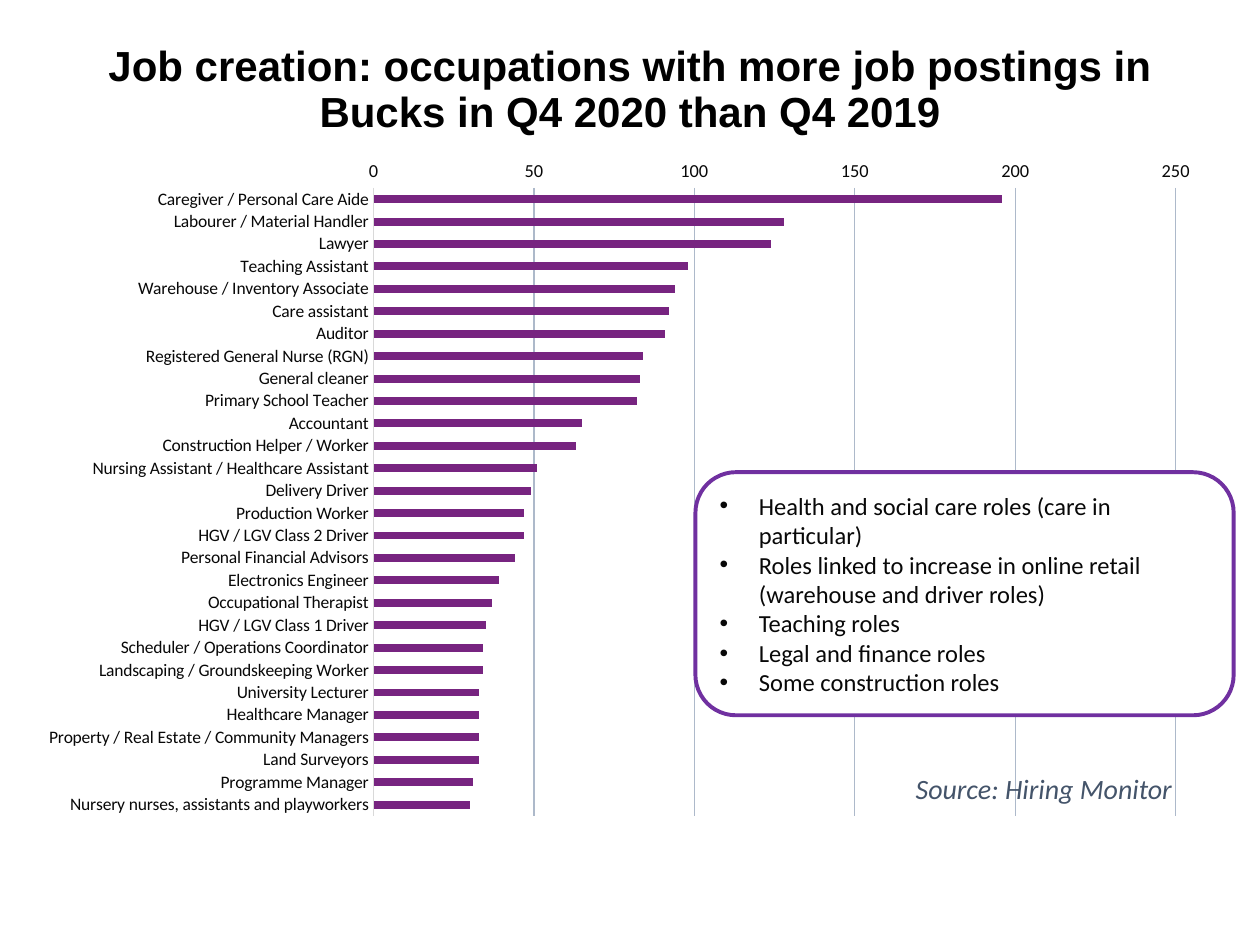
from pptx import Presentation
from pptx.chart.data import CategoryChartData
from pptx.dml.color import RGBColor
from pptx.enum.chart import XL_CHART_TYPE as ChartType, XL_TICK_MARK as TickMark
from pptx.enum.shapes import MSO_SHAPE as Shape
from pptx.enum.text import MSO_ANCHOR as Anchor, PP_ALIGN as Align
from pptx.oxml import parse_xml
from pptx.oxml.ns import nsdecls, qn
from pptx.util import Cm, Pt
from lxml.etree import SubElement

BLACK = RGBColor(0x00, 0x00, 0x00)
INK = RGBColor(0x08, 0x08, 0x08)
WHITE = RGBColor(0xFF, 0xFF, 0xFF)
PLUM = RGBColor(0x77, 0x24, 0x80)
PURPLE = RGBColor(0x70, 0x30, 0xA0)
SLATE = RGBColor(0x44, 0x54, 0x6A)
GRID = RGBColor(0xAD, 0xB9, 0xCA)
AXIS = RGBColor(0xD9, 0xD9, 0xD9)

POSTINGS = {
    "Caregiver / Personal Care Aide": 196,
    "Labourer / Material Handler": 128,
    "Lawyer": 124,
    "Teaching Assistant": 98,
    "Warehouse / Inventory Associate": 94,
    "Care assistant": 92,
    "Auditor": 91,
    "Registered General Nurse (RGN)": 84,
    "General cleaner": 83,
    "Primary School Teacher": 82,
    "Accountant": 65,
    "Construction Helper / Worker": 63,
    "Nursing Assistant / Healthcare Assistant": 51,
    "Delivery Driver": 49,
    "Production Worker": 47,
    "HGV / LGV Class 2 Driver": 47,
    "Personal Financial Advisors": 44,
    "Electronics Engineer": 39,
    "Occupational Therapist": 37,
    "HGV / LGV Class 1 Driver": 35,
    "Scheduler / Operations Coordinator": 34,
    "Landscaping / Groundskeeping Worker": 34,
    "University Lecturer": 33,
    "Healthcare Manager": 33,
    "Property / Real Estate / Community Managers": 33,
    "Land Surveyors": 33,
    "Programme Manager": 31,
    "Nursery nurses, assistants and playworkers": 30,
}
FINDINGS = [
    "Health and social care roles (care in particular)",
    "Roles linked to increase in online retail (warehouse and driver roles)",
    "Teaching roles",
    "Legal and finance roles",
    "Some construction roles",
]


def style_font(font, size, color, name="Calibri", bold=False, italic=False):
    """Set the look of a font."""
    font.name, font.size, font.bold, font.italic = name, Pt(size), bold, italic
    font.color.rgb = color


def add_run(p, text, *look, **flags):
    """Append a formatted run to a paragraph."""
    r = p.add_run()
    r.text = text
    style_font(r.font, *look, **flags)


def add_title(s, text):
    """Place and fill the title placeholder."""
    sp = s.shapes.title
    sp.left, sp.top, sp.width, sp.height = Cm(1.75), Cm(0.53), Cm(21.9), Cm(2.6)
    tf = sp.text_frame
    tf.word_wrap = True
    tf.vertical_anchor = Anchor.MIDDLE
    p = tf.paragraphs[0]
    p.alignment, p.line_spacing = Align.CENTER, 0.9
    add_run(p, text, 24, BLACK, "Arial", bold=True)


def set_plot_area(chart, frame, x, y, w, h):
    """Fix the inner plot area inside the chart frame."""
    shares = {"x": x / frame.width, "y": y / frame.height,
              "w": w / frame.width, "h": h / frame.height}
    sizes = "".join(f'<c:{k} val="{v:.4f}"/>' for k, v in shares.items())
    area = chart._chartSpace.find(".//" + qn("c:plotArea"))
    for old in area.findall(qn("c:layout")):
        area.remove(old)
    area.insert(0, parse_xml(
        f'<c:layout {nsdecls("c")}><c:manualLayout><c:layoutTarget val="inner"/>'
        f'<c:xMode val="edge"/><c:yMode val="edge"/>{sizes}</c:manualLayout></c:layout>'))


def style_axis(axis, size):
    """Remove tick marks and set the label font of an axis."""
    axis.major_tick_mark = axis.minor_tick_mark = TickMark.NONE
    style_font(axis.tick_labels.font, size, INK)


def add_postings_chart(s):
    """Add the bar chart of job postings by occupation."""
    data = CategoryChartData()
    data.categories = list(POSTINGS)
    data.add_series("Series 1", list(POSTINGS.values()))
    frame = s.shapes.add_chart(ChartType.BAR_CLUSTERED, Cm(0.53), Cm(2.95),
                               Cm(23.95), Cm(13.77), data)
    chart = frame.chart
    chart.has_legend = chart.has_title = False
    style_font(chart.font, 10, BLACK)
    set_plot_area(chart, frame, Cm(7), Cm(0.84), Cm(16.17), Cm(12.66))

    plot = chart.plots[0]
    plot.gap_width, plot.vary_by_categories = 182, False
    fill = plot.series[0].format.fill
    fill.solid()
    fill.fore_color.rgb = PLUM

    cat = chart.category_axis
    style_axis(cat, 10)
    cat.reverse_order = True
    cat.format.line.color.rgb = AXIS
    cat.format.line.width = Pt(0.75)

    val = chart.value_axis
    style_axis(val, 10.5)
    val.minimum_scale, val.maximum_scale, val.major_unit = 0, 250, 50
    val.tick_labels.number_format = "#,##0"
    val.tick_labels.number_format_is_linked = False
    val.format.line.fill.background()
    val.has_major_gridlines = True
    val.major_gridlines.format.line.color.rgb = GRID
    val.major_gridlines.format.line.width = Pt(0.75)


def add_bullet(p, indent):
    """Give a paragraph a hanging round bullet."""
    pPr = p._p.get_or_add_pPr()
    pPr.set("marL", str(indent))
    pPr.set("indent", str(-indent))
    SubElement(pPr, qn("a:buFont")).set("typeface", "Arial")
    SubElement(pPr, qn("a:buChar")).set("char", "•")


def add_findings(s, items):
    """Add the rounded box with the list of findings."""
    sp = s.shapes.add_shape(Shape.ROUNDED_RECTANGLE, Cm(14.02), Cm(9.52),
                            Cm(10.85), Cm(4.9))
    sp.shadow.inherit = False
    sp.fill.solid()
    sp.fill.fore_color.rgb = WHITE
    sp.line.color.rgb = PURPLE
    sp.line.width = Pt(2.25)
    tf = sp.text_frame
    tf.word_wrap = True
    tf.vertical_anchor = Anchor.MIDDLE
    for i, item in enumerate(items):
        p = tf.add_paragraph() if i else tf.paragraphs[0]
        p.alignment = Align.LEFT
        add_bullet(p, Cm(0.79))
        add_run(p, item, 14, INK)


def add_source(s, text):
    """Add the source line."""
    tf = s.shapes.add_textbox(Cm(18.21), Cm(15.39), Cm(6.9), Cm(0.97)).text_frame
    tf.word_wrap = True
    p = tf.paragraphs[0]
    p.line_spacing, p.space_after = 1.07, Pt(8)
    add_run(p, text, 16, SLATE, italic=True)


def main():
    """Build and save the slide."""
    prs = Presentation()
    prs.slide_width, prs.slide_height = Cm(25.4), Cm(19.05)
    s = prs.slides.add_slide(prs.slide_layouts[5])
    add_title(s, "Job creation: occupations with more job postings in "
                 "Bucks in Q4 2020 than Q4 2019")
    add_postings_chart(s)
    add_findings(s, FINDINGS)
    add_source(s, "Source: Hiring Monitor")
    prs.save("out.pptx")


if __name__ == "__main__":
    main()
